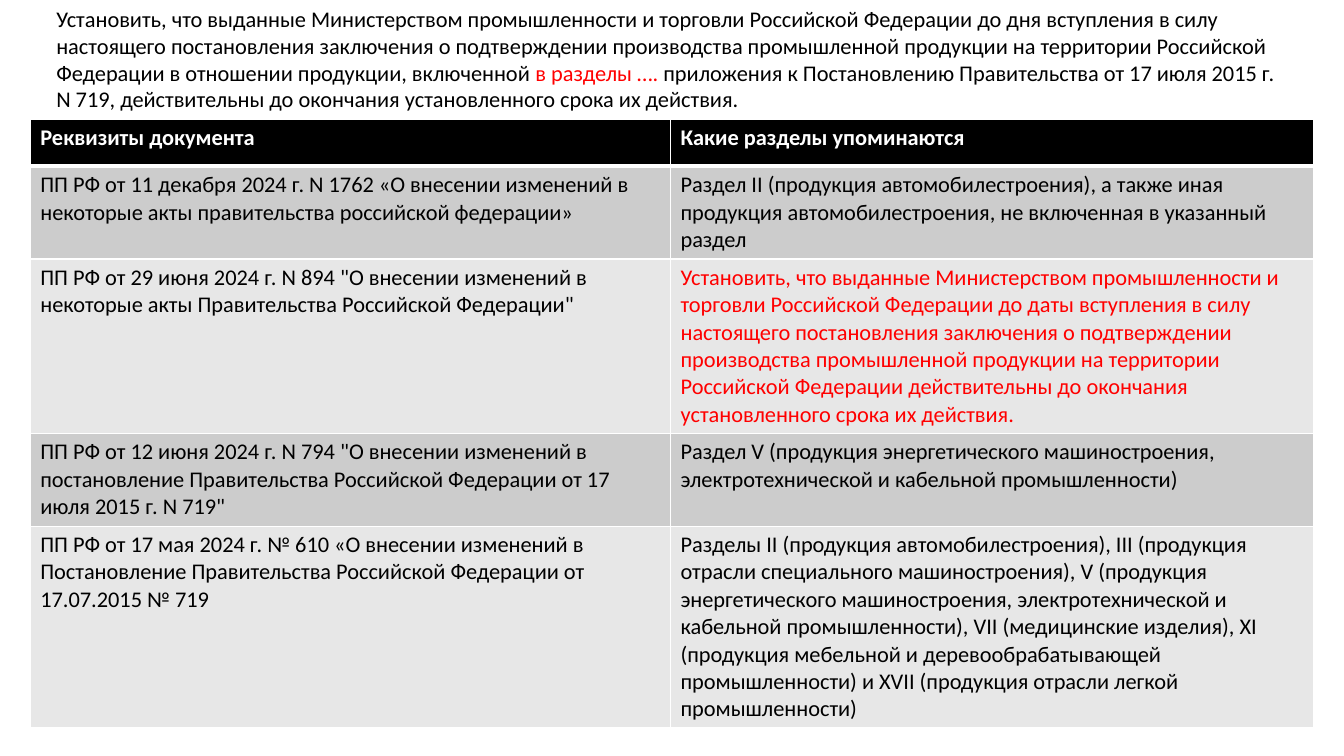
from lxml import etree
from pptx import Presentation
from pptx import util as u
from pptx.dml.color import RGBColor
from pptx.enum import text
from pptx.oxml.ns import qn

COLORS = {"black": "000000", "white": "FFFFFF", "red": "FF0000",
          "band": "CCCCCC", "light": "E7E7E7"}

INTRO = [
    ("Установить, что выданные Министерством промышленности и торговли Российской Федерации до дня "
     "вступления в силу настоящего постановления заключения о подтверждении производства промышленной "
     "продукции на территории Российской Федерации в отношении продукции, включенной ", "black"),
    ("в разделы …. ", "red"),
    ("приложения к Постановлению Правительства от 17 июля 2015 г. N 719, действительны до окончания "
     "установленного срока их действия.", "black"),
]

HEADER = ("Реквизиты документа", "Какие разделы упоминаются")

DECREES = [
    ("ПП РФ от 11 декабря 2024 г. N 1762 «О внесении изменений в некоторые акты правительства "
     "российской федерации»",
     "Раздел II (продукция автомобилестроения), а также иная продукция автомобилестроения, "
     "не включенная в указанный раздел"),
    ("ПП РФ от 29 июня 2024 г. N 894 \"О внесении изменений в некоторые акты Правительства "
     "Российской Федерации\"",
     "Установить, что выданные Министерством промышленности и торговли Российской Федерации до даты "
     "вступления в силу настоящего постановления заключения о подтверждении производства промышленной "
     "продукции на территории Российской Федерации действительны до окончания установленного срока "
     "их действия."),
    ("ПП РФ от 12 июня 2024 г. N 794 \"О внесении изменений в постановление Правительства "
     "Российской Федерации от 17 июля 2015 г. N 719\"",
     "Раздел V (продукция энергетического машиностроения, электротехнической и кабельной "
     "промышленности)"),
    ("ПП РФ от 17 мая 2024 г. № 610 «О внесении изменений в Постановление Правительства "
     "Российской Федерации от 17.07.2015 № 719",
     "Разделы II (продукция автомобилестроения), III (продукция отрасли специального "
     "машиностроения), V (продукция энергетического машиностроения, электротехнической и кабельной "
     "промышленности), VII (медицинские изделия), XI (продукция мебельной и деревообрабатывающей "
     "промышленности) и XVII (продукция отрасли легкой промышленности)"),
]
RED_CELL = (2, 1)
COL_WIDTHS = (6.35, 6.38)
ROW_HEIGHTS = (0.47, 0.92, 1.73, 0.92, 2.0)


def add_run(p, content, color="black", size=16, bold=False, font="Calibri"):
    """Append a formatted run to a paragraph."""
    r = p.add_run()
    r.text = content
    r.font.name, r.font.size, r.font.bold = font, u.Pt(size), bold
    r.font.color.rgb = RGBColor.from_string(COLORS[color])


class SlideBuilder:
    """Draw the elements of one slide in a shared style."""

    def __init__(self, prs):
        self.slide = prs.slides.add_slide(prs.slide_layouts[6])

    def textbox(self, left, top, width, height, runs):
        """Add a wrapped text box with one paragraph of coloured runs."""
        sp = self.slide.shapes.add_textbox(*map(u.Inches, (left, top, width, height)))
        tf = sp.text_frame
        tf.word_wrap = True
        tf.auto_size = text.MSO_AUTO_SIZE.SHAPE_TO_FIT_TEXT
        for content, color in runs:
            add_run(tf.paragraphs[0], content, color)

    def border(self, cell, side, width):
        """Give one side of a cell a white line."""
        ln = etree.SubElement(cell._tc.get_or_add_tcPr(), qn(f"a:ln{side}"), w=str(u.Pt(width)))
        fill = etree.SubElement(ln, qn("a:solidFill"))
        etree.SubElement(fill, qn("a:srgbClr"), val=COLORS["white"])

    def cell(self, cell, content, fill, color, header, below_header):
        """Format and fill one table cell."""
        widths = {"L": 1, "R": 1, "T": 3 if below_header else 1, "B": 3 if header else 1}
        for side, width in widths.items():
            self.border(cell, side, width)
        cell.fill.solid()
        cell.fill.fore_color.rgb = RGBColor.from_string(COLORS[fill])
        add_run(cell.text_frame.paragraphs[0], content, color, bold=header)

    def table(self, left, top, col_widths, row_heights, rows):
        """Add a table with a black header and grey bands."""
        size = (left, top, sum(col_widths), sum(row_heights))
        table = self.slide.shapes.add_table(len(rows), len(col_widths), *map(u.Inches, size)).table
        for col, width in zip(table.columns, col_widths):
            col.width = u.Inches(width)
        for i, (row, height) in enumerate(zip(rows, row_heights)):
            table.rows[i].height = u.Inches(height)
            fill = "black" if i == 0 else ("light", "band")[i % 2]
            for j, content in enumerate(row):
                color = "white" if i == 0 else "red" if (i, j) == RED_CELL else "black"
                self.cell(table.cell(i, j), content, fill, color, i == 0, i == 1)


def main():
    """Build and save the slide."""
    prs = Presentation()
    prs.slide_width, prs.slide_height = u.Inches(13.33), u.Inches(7.5)
    s = SlideBuilder(prs)
    s.table(0.3, 1.18, COL_WIDTHS, ROW_HEIGHTS, [HEADER, *DECREES])
    s.textbox(0.46, 0, 12.42, 1.18, INTRO)
    prs.save("out.pptx")


if __name__ == "__main__":
    main()
